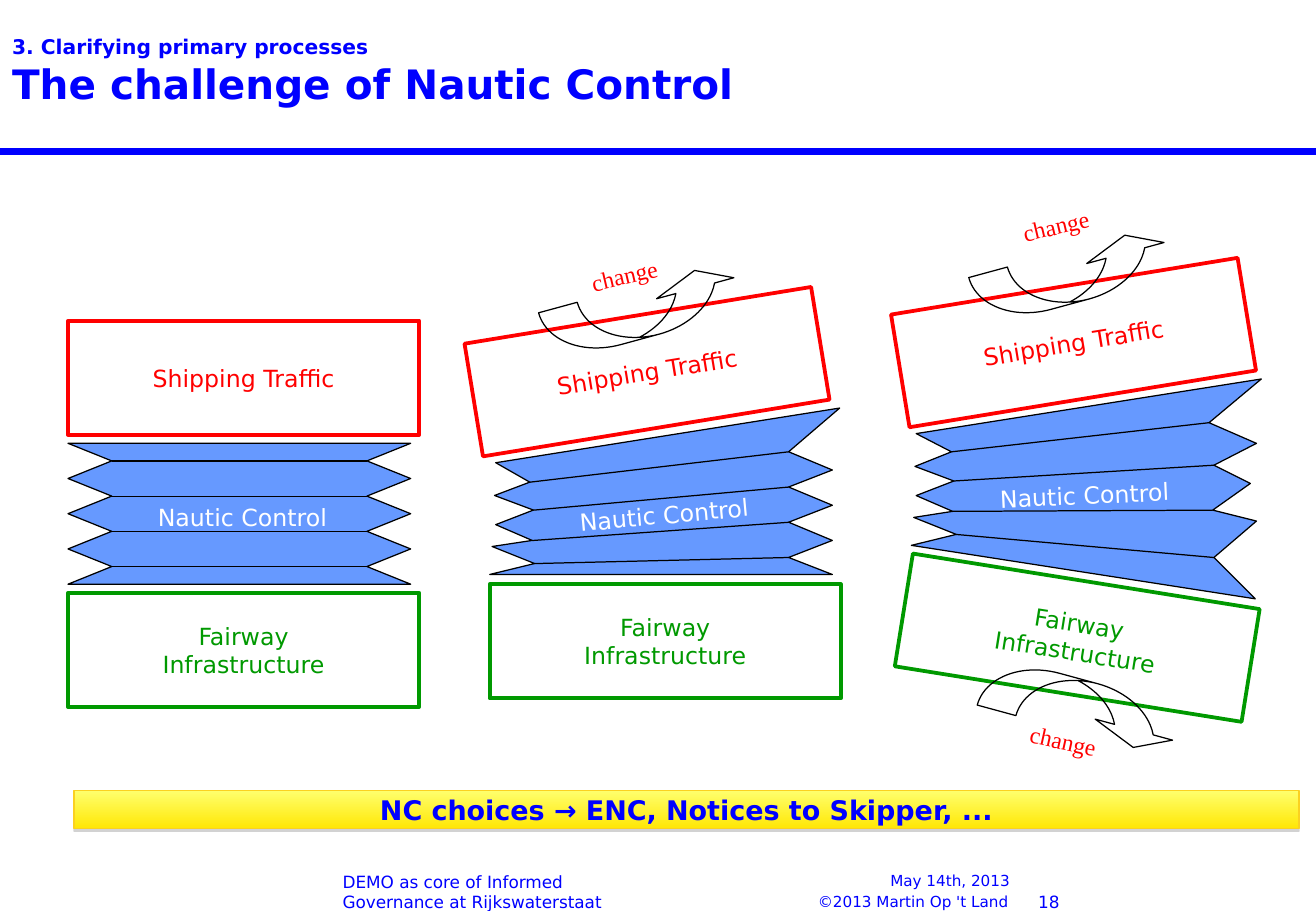
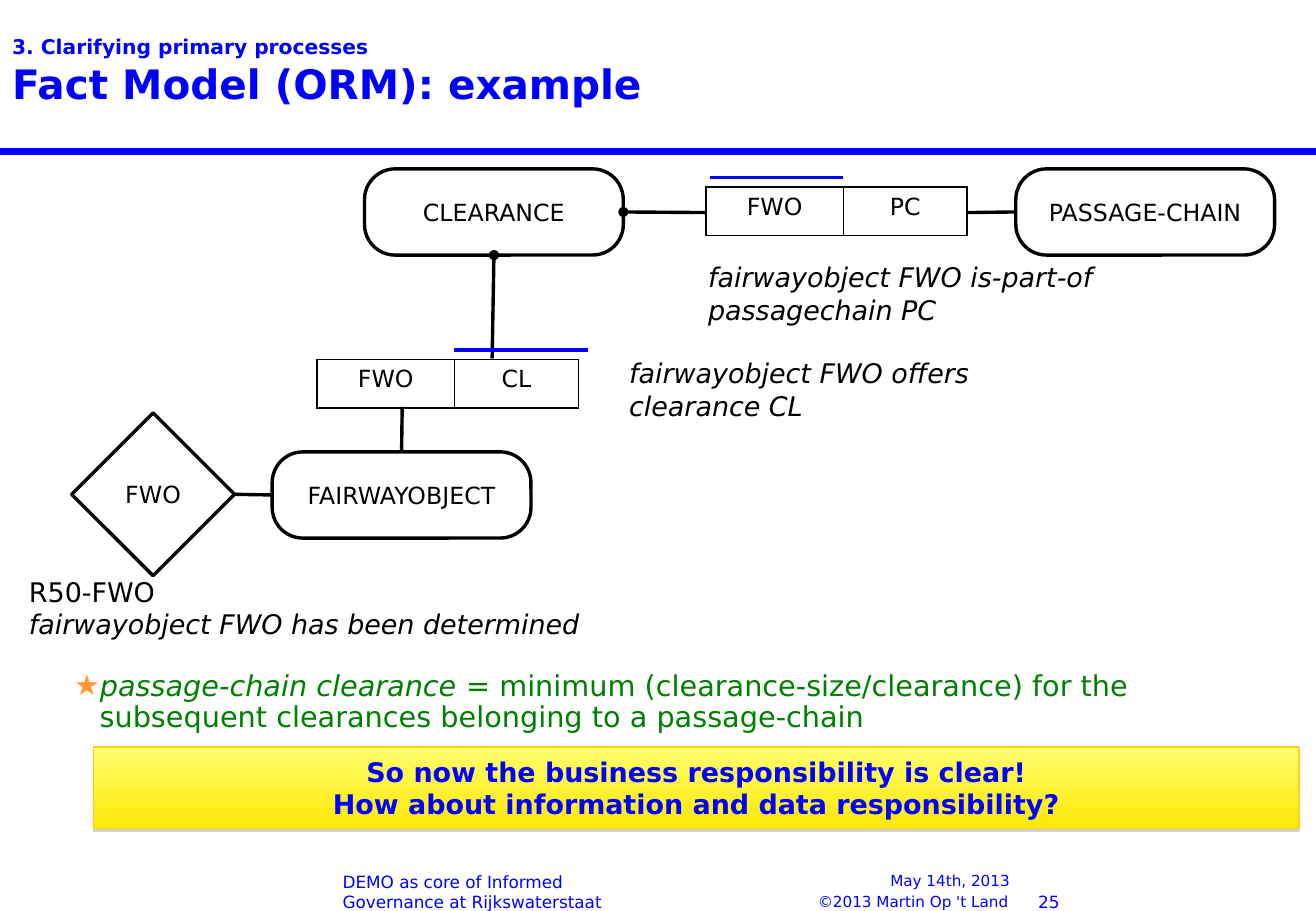
from pptx import Presentation
from pptx.dml.color import RGBColor
from pptx.enum.shapes import MSO_CONNECTOR, MSO_SHAPE
from pptx.enum.text import MSO_ANCHOR, MSO_AUTO_SIZE, PP_ALIGN
from pptx.oxml.ns import qn
from pptx.util import Inches, Pt
from lxml.etree import SubElement

# Shared style
FONT, SERIF = "DejaVu Sans", "Times New Roman"
BLUE, RED, GREEN, BLACK, WHITE = "0000FF", "FF0000", "009900", "000000", "FFFFFF"
BELLOWS_BLUE, LIST_GREEN, STAR_ORANGE = "6699FF", "008000", "FF9933"
BANNER_COLORS, BANNER_EDGE, SHADOW_GRAY = ("FFFF6D", "FFE706"), "FBD120", "808080"
LEFT, CENTER, RIGHT = PP_ALIGN.LEFT, PP_ALIGN.CENTER, PP_ALIGN.RIGHT
TOP, MIDDLE, BOTTOM = MSO_ANCHOR.TOP, MSO_ANCHOR.MIDDLE, MSO_ANCHOR.BOTTOM
SLIDE_WIDTH, SLIDE_HEIGHT = 10.83, 7.5

# Shared content
CHAPTER = "3. Clarifying primary processes"
COPYRIGHT = ("©2013 Martin Op 't Land", (6.73, 7.35, 1.59, 0.15))
DATE = ("May 14th, 2013", (6.68, 7.17, 1.63, 0.36))
FOOTER = ("DEMO as core of Informed Governance at Rijkswaterstaat", (2.82, 7.16, 2.2, 0.35))
NUMBER_BOX = (8.33, 7.16, 0.39, 0.35)

# Slide 1: three stacks; places are (left, top, rotation)
BLOCK_SIZE, LABEL_SIZE = (2.89, 0.94), (1.61, 0.34)
CHANGE_SIZE, ARROW_SIZE = (0.76, 0.34), (1.66, 0.43)
TRAFFIC, FAIRWAY = ["Shipping Traffic"], ["Fairway", "Infrastructure"]
FOLD_TOPS = [3.65 + 0.145 * step for step in range(9)]
STACKS = [
    dict(traffic=(0.56, 2.64, 0), fairway=(0.56, 4.88, 0), label=(1.19, 4.09, 0),
         left=[(0.92 if i % 2 else 0.56, y) for i, y in enumerate(FOLD_TOPS)],
         right=[(3.02 if i % 2 else 3.38, y) for i, y in enumerate(FOLD_TOPS)],
         arrows=[], changes=[]),
    dict(traffic=(3.88, 2.59, 350.7), fairway=(4.03, 4.81, 0), label=(4.66, 4.07, 354.7),
         left=[(4.08, 3.81), (4.36, 3.97), (4.07, 4.08), (4.39, 4.2), (4.08, 4.32),
               (4.38, 4.45), (4.05, 4.5), (4.4, 4.64), (4.03, 4.73)],
         right=[(6.91, 3.36), (6.49, 3.72), (6.85, 3.87), (6.49, 4.01), (6.85, 4.16),
                (6.49, 4.3), (6.85, 4.45), (6.49, 4.59), (6.85, 4.73)],
         arrows=[(4.46, 2.35, 344.8)], changes=[(4.76, 2.1, 346.8)]),
    dict(traffic=(7.39, 2.35, 350.7), fairway=(7.42, 4.78, 9.1), label=(8.12, 3.91, 357.4),
         left=[(7.54, 3.57), (7.83, 3.72), (7.53, 3.84), (7.85, 3.96), (7.54, 4.08),
               (7.84, 4.21), (7.52, 4.26), (7.87, 4.4), (7.5, 4.49)],
         right=[(10.38, 3.12), (9.95, 3.48), (10.34, 3.65), (9.99, 3.83), (10.29, 3.98),
                (9.98, 4.2), (10.34, 4.29), (9.99, 4.59), (10.33, 4.93)],
         arrows=[(8, 2.06, 344.8), (8.07, 5.6, 15.2)],
         changes=[(8.31, 1.69, 346.8), (8.37, 5.93, 12.5)]),
]
CHOICES = (["NC choices → ENC, Notices to Skipper, ..."], (0.61, 6.51, 10.08, 0.31))

# Slide 2: fact model; a connector end is (x, y) or (object name, side)
OBJECT_SIZE = (2.13, 0.71)
OBJECTS = {"CLEARANCE": (3, 1.39), "FAIRWAYOBJECT": (2.24, 3.72), "PASSAGE-CHAIN": (8.36, 1.39)}
DIAMOND = ("FWO", (0.59, 3.4, 1.34, 1.34))
ROLE_WIDTHS, ROLE_HEIGHT = (1.13, 1.02), 0.4
FACTS = [(("FWO", "PC"), (5.81, 1.54)), (("FWO", "CL"), (2.61, 2.96))]
LINKS = [  # begin, end, dot at begin
    (("FWO", 3), ("FAIRWAYOBJECT", 1), False),
    (("CLEARANCE", 3), (5.81, 1.75), True),
    ((7.96, 1.75), ("PASSAGE-CHAIN", 1), False),
    (("CLEARANCE", 2), (4.05, 2.95), True),
    ((3.31, 3.35), ("FAIRWAYOBJECT", 0), False),
]
UNIQUENESS_BARS = [((5.84, 1.46), (6.94, 1.46)), ((3.74, 2.88), (4.84, 2.88))]
READINGS = [
    (["fairwayobject FWO is-part-of passagechain PC"], (5.73, 2.1, 3.86, 0.64)),
    (["fairwayobject FWO offers clearance CL"], (5.08, 2.89, 3.86, 0.64)),
    (["R50-FWO", "fairwayobject FWO has been determined"], (0.14, 4.69, 4.85, 0.64)),
]
RULE = ("passage-chain clearance ", "= minimum (clearance-size/clearance) for the "
        "subsequent clearances belonging to a passage-chain")
RULE_BOX = (0.51, 5.48, 9.19, 0.62)
CONCLUSION = (["So now the business responsibility is clear!",
               "How about information and data responsibility?"], (0.77, 6.15, 9.92, 0.67))


def rgb(color):
    return RGBColor.from_string(color)


def inches(values):
    return [Inches(value) for value in values]


def set_font(font, size, color, bold=False, italic=False, name=FONT):
    font.name, font.size, font.bold, font.italic = name, Pt(size), bold, italic
    font.color.rgb = rgb(color)


def write(shape, lines, size, color, align=LEFT, anchor=TOP, inset=None, wrap=True, **style):
    frame = shape.text_frame
    frame.text = "\n".join(lines)
    frame.word_wrap, frame.vertical_anchor = wrap, anchor
    frame.auto_size = MSO_AUTO_SIZE.NONE
    if inset is not None:
        frame.margin_left = frame.margin_right = Inches(inset)
        frame.margin_top = frame.margin_bottom = Inches(inset)
    for paragraph in frame.paragraphs:
        paragraph.alignment = align
        for run in paragraph.runs:
            set_font(run.font, size, color, **style)


def add_text(slide, lines, box, size, color, rotation=0, **options):
    shape = slide.shapes.add_textbox(*inches(box))
    shape.rotation = rotation
    write(shape, lines, size, color, **options)
    return shape


def paint(shape, line, width, fill=None):
    shape.shadow.inherit = False
    if fill:
        shape.fill.solid()
        shape.fill.fore_color.rgb = rgb(fill)
    else:
        shape.fill.background()
    shape.line.color.rgb = rgb(line)
    shape.line.width = Pt(width)


def add_shape(slide, preset, box, line, width, fill=None, rotation=0):
    shape = slide.shapes.add_shape(preset, *inches(box))
    paint(shape, line, width, fill)
    shape.rotation = rotation
    return shape


def add_line(slide, begin, end, color, width, objects=None, dot=False):
    ends = [(0, 0) if isinstance(point[0], str) else point for point in (begin, end)]
    line = slide.shapes.add_connector(MSO_CONNECTOR.STRAIGHT, *inches(ends[0] + ends[1]))
    for point, connect in ((begin, line.begin_connect), (end, line.end_connect)):
        if isinstance(point[0], str):
            connect(objects[point[0]], point[1])
    line.line.color.rgb = rgb(color)
    line.line.width = Pt(width)
    if dot:
        SubElement(line.line._get_or_add_ln(), qn("a:headEnd"), type="oval")
    SubElement(line._element.spPr, qn("a:effectLst"))
    return line


def add_banner(slide, lines, box):
    banner = add_shape(slide, MSO_SHAPE.RECTANGLE, box, BANNER_EDGE, 0.75)
    banner.fill.gradient()
    banner.fill.gradient_angle = 270
    for stop, color in zip(banner.fill.gradient_stops, BANNER_COLORS):
        stop.color.rgb = rgb(color)
    effects = banner._element.spPr.find(qn("a:effectLst"))
    shadow = SubElement(effects, qn("a:outerShdw"), blurRad="0", dist=str(Pt(1.8)),
                        dir="5400000", rotWithShape="0")
    color = SubElement(shadow, qn("a:srgbClr"), val=SHADOW_GRAY)
    SubElement(color, qn("a:alpha"), val="35000")
    write(banner, lines, 16, BLUE, CENTER, MIDDLE, bold=True)


def place(shape, box):
    shape.left, shape.top, shape.width, shape.height = inches(box)


def add_slide(presentation, layout, title, number):
    slide = presentation.slides.add_slide(presentation.slide_layouts[layout])
    heading = slide.shapes.title
    place(heading, (0, 0, SLIDE_WIDTH, 1.17))
    write(heading, [CHAPTER + "\v" + title], 24, BLUE, anchor=MIDDLE, bold=True)
    paragraph = heading.text_frame.paragraphs[0]
    paragraph.runs[0].font.size = Pt(12)
    SubElement(paragraph._p.find(qn("a:br")), qn("a:rPr"), sz="1200")
    add_text(slide, [DATE[0]], DATE[1], 9, BLUE, align=RIGHT, inset=0)
    add_text(slide, [FOOTER[0]], FOOTER[1], 10, BLUE, anchor=BOTTOM, inset=0)
    add_text(slide, [str(number)], NUMBER_BOX, 10, BLUE, align=RIGHT, anchor=BOTTOM, inset=0)
    return slide


def add_master_parts(presentation, slide):
    band = add_line(slide, (0, 1.25), (SLIDE_WIDTH, 1.25), BLUE, 4)
    notice = add_text(slide, [COPYRIGHT[0]], COPYRIGHT[1], 9, BLUE,
                      anchor=BOTTOM, inset=0, wrap=False)
    for part in (band, notice):
        presentation.slide_master.shapes.element.append(part._element)


def add_stack(slide, stack):
    # Blocks above and below
    for key, lines, color in (("traffic", TRAFFIC, RED), ("fairway", FAIRWAY, GREEN)):
        left, top, rotation = stack[key]
        block = add_shape(slide, MSO_SHAPE.RECTANGLE, (left, top, *BLOCK_SIZE),
                          color, 2.25, rotation=rotation)
        write(block, lines, 14, color, CENTER, MIDDLE, wrap=False)
    # Bellows with its folds
    outline = [inches(point) for point in stack["right"] + stack["left"][::-1]]
    builder = slide.shapes.build_freeform(*outline[0])
    builder.add_line_segments(outline[1:], close=True)
    paint(builder.convert_to_shape(), BLACK, 0.75, BELLOWS_BLUE)
    for begin, end in list(zip(stack["left"], stack["right"]))[1::2]:
        add_line(slide, begin, end, BLACK, 0.75)
    left, top, rotation = stack["label"]
    add_text(slide, ["Nautic Control"], (left, top, *LABEL_SIZE), 14, WHITE, rotation,
             align=CENTER, wrap=False)
    # Change arrows: the second one is mirrored
    for index, (left, top, rotation) in enumerate(stack["arrows"]):
        arrow = add_shape(slide, MSO_SHAPE.CURVED_UP_ARROW, (left, top, *ARROW_SIZE),
                          BLACK, 0.75, rotation=rotation)
        for position, value in enumerate((0.767, 1.534, 0.333)):
            arrow.adjustments[position] = value
        if index:
            arrow._element.spPr.xfrm.set("flipV", "1")
    for left, top, rotation in stack["changes"]:
        add_text(slide, ["change"], (left, top, *CHANGE_SIZE), 14, RED, rotation,
                 align=CENTER, wrap=False, name=SERIF)


def add_fact(slide, roles, position):
    box = (*position, sum(ROLE_WIDTHS), ROLE_HEIGHT)
    table = slide.shapes.add_table(1, len(roles), *inches(box)).table
    table.first_row = table.horz_banding = False
    for column, (role, width) in enumerate(zip(roles, ROLE_WIDTHS)):
        table.columns[column].width = Inches(width)
        cell = table.cell(0, column)
        cell.text = role
        paragraph = cell.text_frame.paragraphs[0]
        paragraph.alignment = CENTER
        set_font(paragraph.runs[0].font, 14, BLACK)
        properties = cell._tc.get_or_add_tcPr()
        for side in ("lnL", "lnR", "lnT", "lnB"):
            border = SubElement(properties, qn("a:" + side), w=str(Pt(1)))
            fill = SubElement(border, qn("a:solidFill"))
            SubElement(fill, qn("a:srgbClr"), val=BLACK)
        cell.fill.background()


def add_rule(slide):
    body = slide.placeholders[1]
    place(body, RULE_BOX)
    body.text_frame.auto_size = MSO_AUTO_SIZE.NONE
    paragraph = body.text_frame.paragraphs[0]
    properties = paragraph._p.get_or_add_pPr()
    properties.set("marL", str(Inches(0.21)))
    properties.set("indent", str(-Inches(0.21)))
    color = SubElement(properties, qn("a:buClr"))
    SubElement(color, qn("a:srgbClr"), val=STAR_ORANGE)
    SubElement(properties, qn("a:buFont"), typeface=FONT)
    SubElement(properties, qn("a:buChar"), char="★")
    paragraph.line_spacing, paragraph.space_before = 0.9, Pt(0)
    for text, italic in zip(RULE, (True, False)):
        run = paragraph.add_run()
        run.text = text
        set_font(run.font, 17, LIST_GREEN, italic=italic)


def add_fact_model(slide):
    # Object types and the identifying diamond
    objects = {}
    for name, position in OBJECTS.items():
        shape = add_shape(slide, MSO_SHAPE.ROUNDED_RECTANGLE, (*position, *OBJECT_SIZE),
                          BLACK, 2, WHITE)
        shape.adjustments[0] = 0.355
        objects[name] = shape
    objects[DIAMOND[0]] = add_shape(slide, MSO_SHAPE.DIAMOND, DIAMOND[1], BLACK, 2, WHITE)
    for name, shape in objects.items():
        write(shape, [name], 14, BLACK, CENTER, MIDDLE, inset=0)
    # Fact types, links and readings
    for roles, position in FACTS:
        add_fact(slide, roles, position)
    for begin, end, dot in LINKS:
        add_line(slide, begin, end, BLACK, 2, objects, dot)
    for begin, end in UNIQUENESS_BARS:
        add_line(slide, begin, end, BLUE, 2)
    for lines, box in READINGS:
        reading = add_text(slide, lines, box, 16, BLACK, italic=True)
        if len(lines) > 1:
            reading.text_frame.paragraphs[0].runs[0].font.italic = False


def main():
    presentation = Presentation()
    presentation.slide_width, presentation.slide_height = inches((SLIDE_WIDTH, SLIDE_HEIGHT))

    challenge = add_slide(presentation, 5, "The challenge of Nautic Control", 18)
    add_master_parts(presentation, challenge)
    for stack in STACKS:
        add_stack(challenge, stack)
    add_banner(challenge, *CHOICES)

    fact_model = add_slide(presentation, 1, "Fact Model (ORM): example", 25)
    add_rule(fact_model)
    add_fact_model(fact_model)
    add_banner(fact_model, *CONCLUSION)
    presentation.save("out.pptx")


if __name__ == "__main__":
    main()
